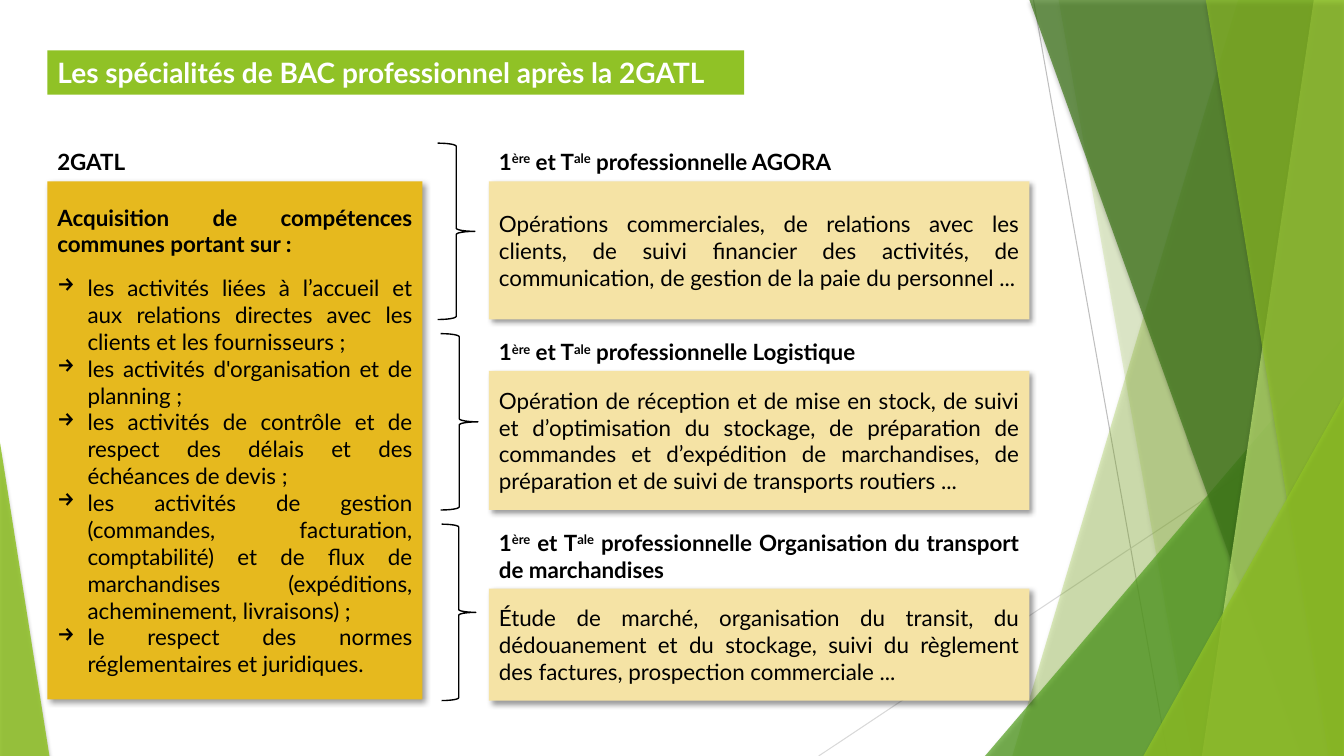
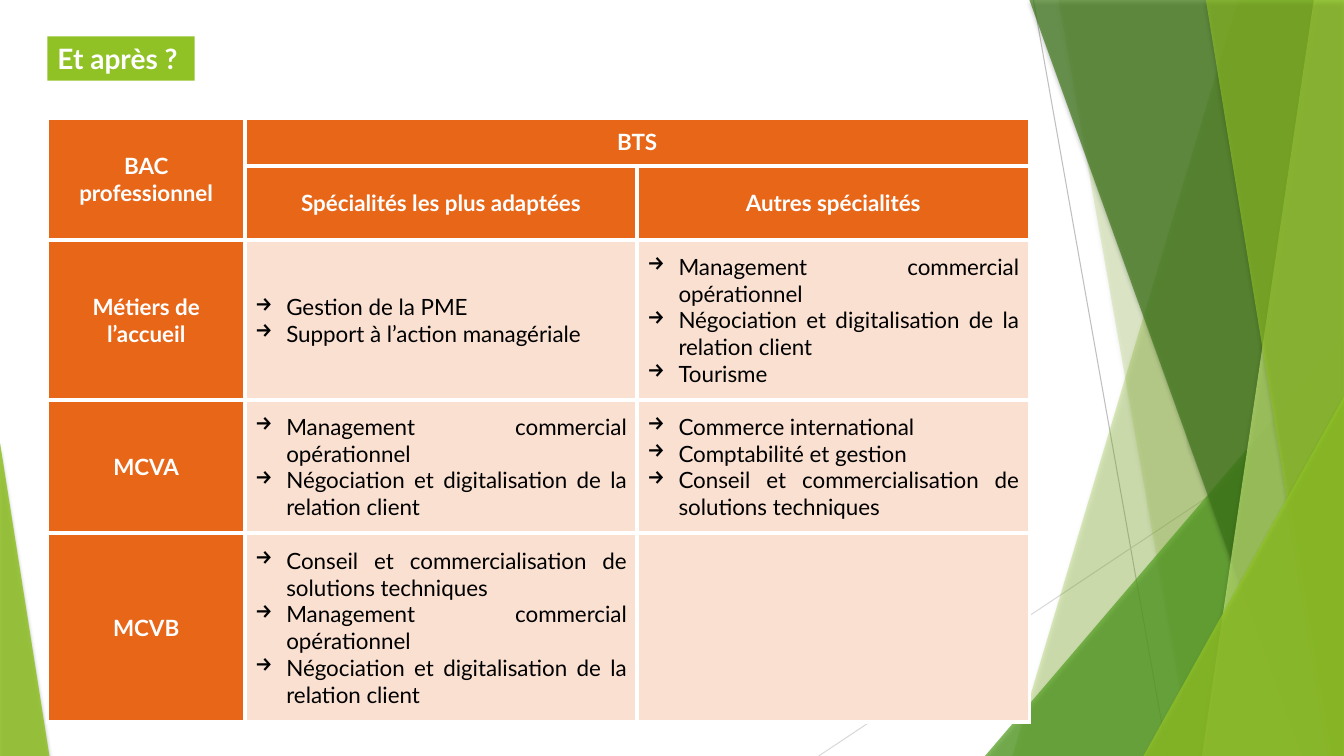
from lxml.etree import SubElement
from pptx import Presentation
from pptx.dml.color import RGBColor
from pptx.enum.shapes import MSO_CONNECTOR, MSO_SHAPE
from pptx.enum.text import MSO_ANCHOR, MSO_AUTO_SIZE, PP_ALIGN
from pptx.oxml.ns import qn
from pptx.util import Inches, Pt

FONT = "Lato"
BLACK = RGBColor(0x00, 0x00, 0x00)
WHITE = RGBColor(0xFF, 0xFF, 0xFF)
LIME = RGBColor(0x90, 0xC2, 0x26)
GREEN = RGBColor(0x54, 0xA0, 0x21)
DARK_GREEN = RGBColor(0x3F, 0x78, 0x19)
PALE_GREEN = RGBColor(0xC0, 0xE4, 0x74)
GOLD = RGBColor(0xE6, 0xB9, 0x1E)
CREAM = RGBColor(0xF5, 0xE3, 0xA5)
ORANGE = RGBColor(0xE7, 0x66, 0x18)
PEACH = RGBColor(0xFA, 0xE0, 0xD1)
GREY = RGBColor(0xBF, 0xBF, 0xBF)
LIGHT_GREY = RGBColor(0xD9, 0xD9, 0xD9)

WIDTH, HEIGHT = 13.33, 7.5
LEFT = 0.47
BOX_LEFT, BOX_WIDTH = 4.85, 5.36
FIRST_TOP, PITCH, BLOCK_HEIGHT = 1.42, 1.89, 1.75

COMMON_SKILLS = [
    "les activités liées à l’accueil et aux relations directes avec les clients et les fournisseurs ;",
    "les activités d'organisation et de planning ;",
    "les activités de contrôle et de respect des délais et des échéances de devis ;",
    "les activités de gestion (commandes, facturation, comptabilité) et de flux de marchandises "
    "(expéditions, acheminement, livraisons) ;",
    "le respect des normes réglementaires et juridiques.",
]
SPECIALITIES = [
    ("AGORA", 0.38, 4.34, 0.37,
     "Opérations commerciales, de relations avec les clients, de suivi financier des activités, "
     "de communication, de gestion de la paie du personnel ..."),
    ("Logistique", 0.37, 4.37, 0.37,
     "Opération de réception et de mise en stock, de suivi et d’optimisation du stockage, "
     "de préparation de commandes et d’expédition de marchandises, de préparation et de suivi "
     "de transports routiers ..."),
    ("Organisation du transport de marchandises", 0.64, 4.38, 0.34,
     "Étude de marché, organisation du transit, du dédouanement et du stockage, suivi du "
     "règlement des factures, prospection commerciale ..."),
]
MANAGEMENT = "Management commercial opérationnel"
NEGOTIATION = "Négociation et digitalisation de la relation client"
ADVICE = "Conseil et commercialisation de solutions techniques"
BTS_ROWS = [
    ("Métiers de l’accueil",
     ["Gestion de la PME", "Support à l’action managériale"],
     [MANAGEMENT, NEGOTIATION, "Tourisme"]),
    ("MCVA",
     [MANAGEMENT, NEGOTIATION],
     ["Commerce international", "Comptabilité et gestion", ADVICE]),
    ("MCVB", [ADVICE, MANAGEMENT, NEGOTIATION], []),
]


def box(left, top, width, height):
    """Return a position and size in inches as lengths."""
    return Inches(left), Inches(top), Inches(width), Inches(height)


def add_shadow(sp, alpha, blur, distance, angle):
    """Give a shape a soft black outer shadow."""
    sp.shadow.inherit = False
    shadow = SubElement(sp.element.spPr.find(qn("a:effectLst")), qn("a:outerShdw"),
                        blurRad=str(Pt(blur)), dist=str(Pt(distance)),
                        dir=str(angle * 60000), algn="tl", rotWithShape="0")
    color = SubElement(shadow, qn("a:srgbClr"), val="000000")
    SubElement(color, qn("a:alpha"), val=str(alpha * 1000))


def paint_facet(sp, color, opacity):
    """Fill a decorative facet with a translucent colour."""
    sp.fill.solid()
    sp.fill.fore_color.rgb = color
    SubElement(sp.element.spPr.find(qn("a:solidFill"))[0], qn("a:alpha"), val=str(opacity * 1000))
    sp.line.fill.background()
    add_shadow(sp, 35, 3, 2, 90)


def add_line(shapes, start, end, color):
    """Draw a thin straight line."""
    line = shapes.add_connector(MSO_CONNECTOR.STRAIGHT, *map(Inches, start + end))
    line.line.color.rgb = color
    line.line.width = Pt(0.75)
    SubElement(line.element.spPr, qn("a:effectLst"))


def add_band(shapes, points, color, opacity):
    """Draw a polygonal facet."""
    first, *others = [(Inches(x), Inches(y)) for x, y in points]
    builder = shapes.build_freeform(*first)
    builder.add_line_segments(others)
    paint_facet(builder.convert_to_shape(), color, opacity)


def add_triangle(shapes, position, apex, color, opacity):
    """Draw a triangular facet."""
    sp = shapes.add_shape(MSO_SHAPE.ISOSCELES_TRIANGLE, *box(*position))
    sp.adjustments[0] = apex
    paint_facet(sp, color, opacity)


def add_right_band(shapes, top_x, bottom_x, color, opacity):
    """Draw a facet reaching from a slanted edge to the right of the slide."""
    add_band(shapes, [(top_x, 0), (WIDTH, 0), (WIDTH, HEIGHT), (bottom_x, HEIGHT)], color, opacity)


def decorate_layout(layout, slide):
    """Draw the facets on a slide and move them to its layout."""
    group = slide.shapes.add_group_shape()
    shapes = group.shapes
    add_line(shapes, (10.25, 0), (11.58, HEIGHT), GREY)
    add_line(shapes, (WIDTH, 4.03), (8.12, HEIGHT), LIGHT_GREY)
    add_right_band(shapes, 12.28, 10.04, LIME, 30)
    add_right_band(shapes, 10.5, 11.82, LIME, 20)
    add_triangle(shapes, (9.77, 3.33, 3.56, 4.17), 1, GREEN, 72)
    add_right_band(shapes, 10.21, 12.91, DARK_GREEN, 70)
    add_right_band(shapes, 13.03, 11.92, PALE_GREEN, 70)
    add_right_band(shapes, 11.96, 13.18, LIME, 65)
    add_triangle(shapes, (11.34, 3.93, 1.99, 3.57), 1, LIME, 80)
    add_triangle(shapes, (0, 4.39, 0.49, 3.11), 0, LIME, 85)
    for number, props in enumerate(group.element.xpath(".//p:cNvPr"), 101):
        props.set("id", str(number))
    layout.element.cSld.spTree.insert(2, group.element)


def format_runs(p, color=BLACK, bold=False, size=16):
    """Set the font of every run of a paragraph."""
    for r in p.runs:
        r.font.name = FONT
        r.font.size = Pt(size)
        r.font.bold = bold
        r.font.color.rgb = color


def add_bullet(p, indent):
    """Put a hanging arrow bullet before a paragraph."""
    pPr = p._p.get_or_add_pPr()
    pPr.set("marL", str(Inches(indent)))
    pPr.set("indent", str(-Inches(indent)))
    SubElement(SubElement(pPr, qn("a:buClr")), qn("a:srgbClr"), val="000000")
    SubElement(pPr, qn("a:buChar"), char="→")


def write_bullets(tf, items, indent, new_first=False):
    """Write justified bullet paragraphs, starting in the first paragraph or after it."""
    for number, item in enumerate(items):
        p = tf.add_paragraph() if number or new_first else tf.paragraphs[0]
        p.text = item
        add_bullet(p, indent)
        p.alignment = PP_ALIGN.JUSTIFY
        format_runs(p)


def set_title(slide, text, top, width):
    """Place the title on its green strip."""
    title = slide.shapes.title
    title.left, title.top, title.width, title.height = box(LEFT, top, width, 0.44)
    title.fill.solid()
    title.fill.fore_color.rgb = LIME
    tf = title.text_frame
    tf.text = text
    tf.word_wrap = True
    tf.auto_size = MSO_AUTO_SIZE.NONE
    tf.vertical_anchor = MSO_ANCHOR.TOP
    tf.paragraphs[0].alignment = PP_ALIGN.LEFT
    format_runs(tf.paragraphs[0], WHITE, True, 20)


def add_card(slide, position, color, text, bold=False):
    """Add a shadowed box of justified text and return its text frame."""
    sp = slide.shapes.add_shape(MSO_SHAPE.RECTANGLE, *box(*position))
    sp.fill.solid()
    sp.fill.fore_color.rgb = color
    sp.line.fill.background()
    add_shadow(sp, 40, 4, 3, 45)
    tf = sp.text_frame
    tf.text = text
    tf.word_wrap = True
    tf.vertical_anchor = MSO_ANCHOR.MIDDLE
    tf.paragraphs[0].alignment = PP_ALIGN.JUSTIFY
    format_runs(tf.paragraphs[0], bold=bold)
    return tf


def add_label(slide, position, parts):
    """Add a bold heading whose every second part is superscript."""
    tf = slide.shapes.add_textbox(*box(*position)).text_frame
    tf.word_wrap = True
    p = tf.paragraphs[0]
    p.alignment = PP_ALIGN.JUSTIFY
    for number, part in enumerate(parts):
        r = p.add_run()
        r.text = part
        if number % 2:
            r._r.get_or_add_rPr().set("baseline", "30000")
    format_runs(p, bold=True)


def add_brace(slide, left, top, width):
    """Add a black right brace beside a speciality."""
    sp = slide.shapes.add_shape(MSO_SHAPE.RIGHT_BRACE, *box(left, top, width, BLOCK_HEIGHT))
    sp.fill.background()
    sp.line.color.rgb = BLACK
    sp.line.width = Pt(1)
    sp.shadow.inherit = False


def fill_cell(cell, color):
    """Give a cell white borders, a fill and equal margins."""
    tcPr = cell._tc.get_or_add_tcPr()
    for side in ("a:lnL", "a:lnR", "a:lnT", "a:lnB"):
        border = SubElement(tcPr, qn(side), w=str(Pt(3)))
        SubElement(SubElement(border, qn("a:solidFill")), qn("a:srgbClr"), val=str(WHITE))
    cell.fill.solid()
    cell.fill.fore_color.rgb = color
    cell.margin_left = cell.margin_right = cell.margin_top = cell.margin_bottom = Inches(0.1)
    cell.vertical_anchor = MSO_ANCHOR.MIDDLE


def write_header(cell, text):
    """Write a centred white heading in a cell."""
    p = cell.text_frame.paragraphs[0]
    p.text = text
    p.alignment = PP_ALIGN.CENTER
    format_runs(p, WHITE, True)


def add_bts_table(slide):
    """Add the table of BTS courses for each BAC."""
    widths, heights = (1.96, 3.89, 3.89), (0.48, 0.48, 1.59, 1.32, 1.87)
    frame = slide.shapes.add_table(len(heights), len(widths),
                                   *box(LEFT, 1.17, sum(widths), sum(heights)))
    table = frame.table
    table.first_row = table.horz_banding = False
    for column, width in zip(table.columns, widths):
        column.width = Inches(width)
    for y, height in enumerate(heights):
        table.rows[y].height = Inches(height)
        for x in range(len(widths)):
            fill_cell(table.cell(y, x), ORANGE if y < 2 or x == 0 else PEACH)
    table.cell(0, 0).merge(table.cell(1, 0))
    table.cell(0, 1).merge(table.cell(0, 2))
    write_header(table.cell(0, 0), "BAC professionnel")
    write_header(table.cell(0, 1), "BTS")
    write_header(table.cell(1, 1), "Spécialités les plus adaptées")
    write_header(table.cell(1, 2), "Autres spécialités")
    for y, (name, *courses) in enumerate(BTS_ROWS, 2):
        write_header(table.cell(y, 0), name)
        for x, items in enumerate(courses, 1):
            write_bullets(table.cell(y, x).text_frame, items, 0.31)


def build_specialities(slide):
    """Fill the slide on the BAC specialities."""
    set_title(slide, "Les spécialités de BAC professionnel après la 2GATL", 0.5, 6.91)
    add_label(slide, (LEFT, FIRST_TOP, 3.47, 0.37), ["2GATL"])
    tf = add_card(slide, (LEFT, 1.8, 3.72, 5.14), GOLD,
                  "Acquisition de compétences communes portant sur :", True)
    tf.paragraphs[0].space_after = Pt(12)
    write_bullets(tf, COMMON_SKILLS, 0.3, True)
    for number, (name, label_height, brace_left, brace_width, text) in enumerate(SPECIALITIES):
        top = FIRST_TOP + PITCH * number
        add_brace(slide, brace_left, top, brace_width)
        add_label(slide, (BOX_LEFT, top, BOX_WIDTH, label_height),
                  ["1", "ère", " et T", "ale", f" professionnelle {name}"])
        add_card(slide, (BOX_LEFT, top + label_height, BOX_WIDTH, BLOCK_HEIGHT - label_height),
                 CREAM, text)


def main():
    """Build and save the presentation."""
    prs = Presentation()
    prs.slide_width, prs.slide_height = Inches(WIDTH), Inches(HEIGHT)
    layout = prs.slide_layouts[5]
    first = prs.slides.add_slide(layout)
    decorate_layout(layout, first)
    build_specialities(first)
    second = prs.slides.add_slide(layout)
    set_title(second, "Et après ?", 0.36, 1.46)
    add_bts_table(second)
    prs.save("out.pptx")


if __name__ == "__main__":
    main()
